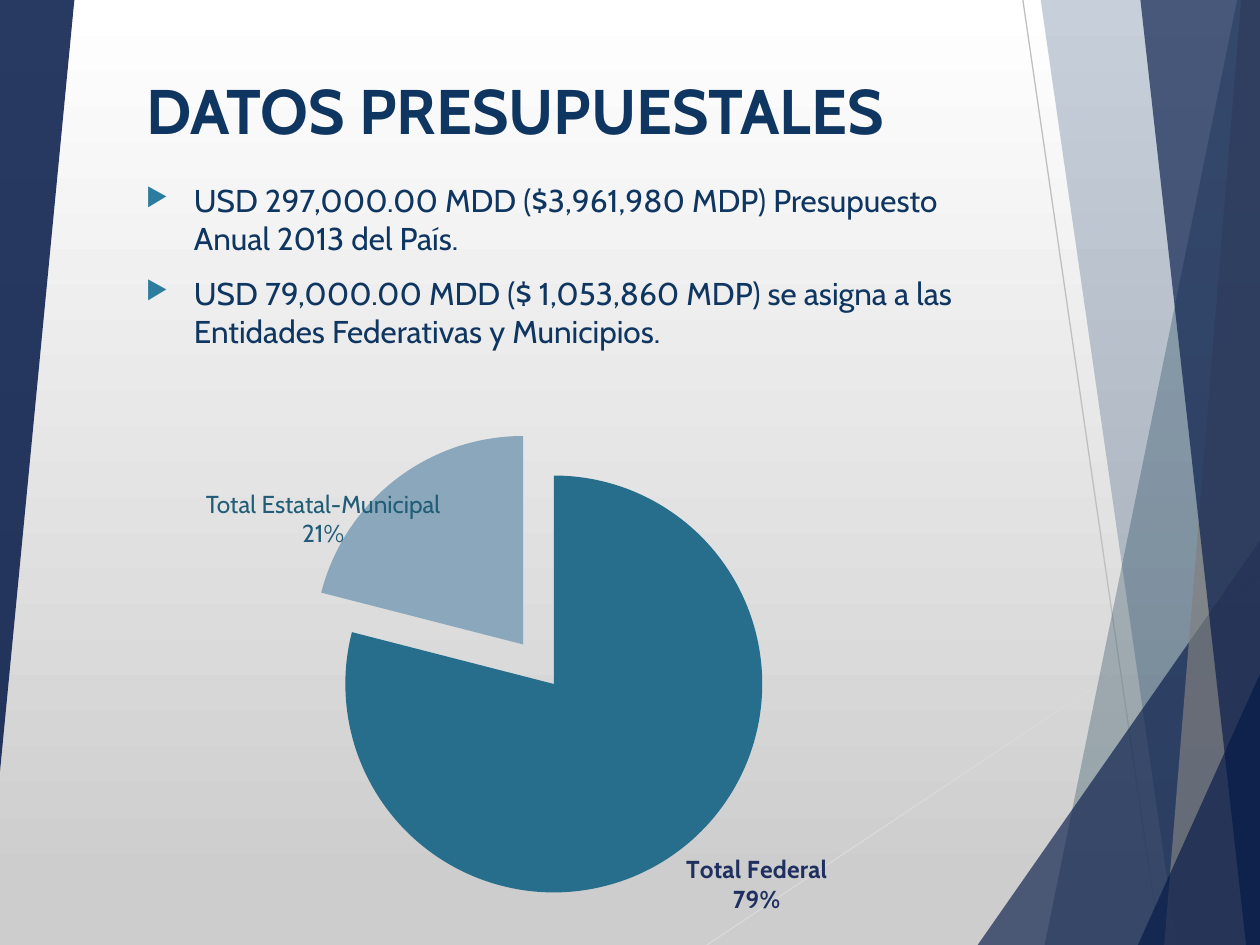
"""Build the budget data slide with its faceted frame, bullets and exploded pie."""
from lxml.etree import SubElement
from pptx import Presentation
from pptx.chart.data import CategoryChartData
from pptx.dml.color import RGBColor as Rgb
from pptx.enum.chart import XL_CHART_TYPE as ChartType, XL_LABEL_POSITION as LabelPosition
from pptx.enum.shapes import MSO_CONNECTOR as Connector
from pptx.enum.text import MSO_ANCHOR as Anchor, PP_ALIGN as Align
from pptx.oxml import parse_xml
from pptx.oxml.ns import nsdecls, qn
from pptx.util import Cm, Pt

THEME = {
    "font": "Cabin",
    "ink": Rgb.from_string("0F3661"),
    "bullet": "2C7C9F",
    "caption": Rgb.from_string("215D77"),
    "pie_label": Rgb.from_string("1F2F60"),
    "slices": ["276E8D", "8AA7BB"],
    "backdrop": [(0, "FFFFFF"), (0.94, "CDCDCD")],
    "title_size": Pt(36),
    "body_size": Pt(18),
    "label_size": Pt(14),
}
WIDTH, HEIGHT = 25.4, 19.05


def apply(target, values):
    for name, value in values.items():
        setattr(target, name, value)


def font_values(size, colour, bold=False):
    return {"name": THEME["font"], "size": THEME[size], "bold": bold}, {"rgb": THEME[colour]}


deck = Presentation()
apply(deck, {"slide_width": Cm(WIDTH), "slide_height": Cm(HEIGHT)})
page = deck.slides.add_slide(deck.slide_layouts[5])
backdrop = page.background.fill
backdrop.gradient()
backdrop.gradient_angle = 270
for stop, (position, colour) in zip(backdrop.gradient_stops, THEME["backdrop"]):
    stop.position = position
    stop.color.rgb = Rgb.from_string(colour)

for ends, colour in [
    ((14.25, HEIGHT, WIDTH, 11.61), "D9D9D9"),
    ((20.62, 0, 23.39, HEIGHT), "BFBFBF"),
]:
    line = page.shapes.add_connector(Connector.STRAIGHT, *map(Cm, ends))
    line.line.width = Pt(0.75)
    line.line.color.rgb = Rgb.from_string(colour)
    SubElement(line._element.spPr, qn("a:effectLst"))

RIGHT_SIDE = [(WIDTH, HEIGHT), (WIDTH, 0)]
facets = [
    ([(24.94, 0), (21.06, HEIGHT), *RIGHT_SIDE], "163E50", 30),
    ([(20.98, 0), (23.72, HEIGHT), *RIGHT_SIDE], "0F3661", 23),
    ([(19.71, HEIGHT), (WIDTH, 10.9), (WIDTH, HEIGHT)], "041847", 65),
    ([(25.02, 0), (23.47, HEIGHT), *RIGHT_SIDE], "808080", 70),
    ([(22.99, 0), (25.12, HEIGHT), *RIGHT_SIDE], "041847", 65),
    ([(22.94, HEIGHT), (WIDTH, 13.59), (WIDTH, HEIGHT)], "041847", 65),
    ([(0, 0), (1.5, 0), (0, 15.56)], "041847", 85),
]
for corners, colour, opacity in facets:
    points = [(Cm(x), Cm(y)) for x, y in corners]
    outline = page.shapes.build_freeform(*points[0])
    outline.add_line_segments(points[1:], close=True)
    facet = outline.convert_to_shape()
    facet.shadow.inherit = False
    facet.line.fill.background()
    facet.fill.solid()
    facet.fill.fore_color.rgb = Rgb.from_string(colour)
    tint = facet._element.spPr.find(f"{qn('a:solidFill')}/{qn('a:srgbClr')}")
    SubElement(tint, qn("a:alpha"), val=str(opacity * 1000))

title = page.shapes.title
apply(title, {"left": Cm(2.69), "top": Cm(1.32), "width": Cm(17.63), "height": Cm(3.66)})
title.text_frame.vertical_anchor = Anchor.TOP

bullets = page.shapes.add_textbox(Cm(2.69), Cm(3.53), Cm(16.99), Cm(5.79))

pie_data = CategoryChartData(number_format="0")
pie_data.categories = ["Total Federal", "Total Estatal-Municipal"]
pie_data.add_series("Series 1", [79, 21])
chart = page.shapes.add_chart(
    ChartType.PIE, Cm(3.51), Cm(8.53), Cm(15.01), Cm(10.52), pie_data
).chart
apply(chart, {"has_legend": False, "has_title": False})
apply(chart.font, {"name": THEME["font"], "size": THEME["label_size"]})
plot = chart.plots[0]
plot.vary_by_categories = True
series = plot.series[0]
for index, colour in enumerate(THEME["slices"]):
    fill = series.points[index].format.fill
    fill.solid()
    fill.fore_color.rgb = Rgb.from_string(colour)
small_slice = series._element.findall(qn("c:dPt"))[1]
small_slice.find(qn("c:idx")).addnext(parse_xml(f'<c:explosion {nsdecls("c")} val="24"/>'))

labels = series.data_labels
apply(labels, {
    "show_category_name": True, "show_percentage": True, "show_value": False,
    "number_format": "0%", "number_format_is_linked": False,
    "position": LabelPosition.OUTSIDE_END,
})
font, colour = font_values("label_size", "pie_label", True)
apply(labels.font, font)
apply(labels.font.color, colour)
labels._element.insert(0, parse_xml(
    f'<c:dLbl {nsdecls("c")}><c:idx val="1"/><c:delete val="1"/></c:dLbl>'))
labels._element.find(qn("c:showBubbleSize")).addnext(
    parse_xml(f'<c:separator {nsdecls("c")}>\n</c:separator>'))

plot_area = chart._chartSpace.chart.plotArea
for old_layout in plot_area.findall(qn("c:layout")):
    plot_area.remove(old_layout)
frame = {"layoutTarget": "inner", "xMode": "edge", "yMode": "edge",
         "x": 0.23, "y": 0.1, "w": 0.56, "h": 0.8}
settings = "".join(f'<c:{name} val="{value}"/>' for name, value in frame.items())
plot_area.insert(0, parse_xml(
    f'<c:layout {nsdecls("c")}><c:manualLayout>{settings}</c:manualLayout></c:layout>'))

caption = page.shapes.add_textbox(Cm(3.71), Cm(9.73), Cm(5.61), Cm(1.45))

texts = [
    (title, ["DATOS PRESUPUESTALES"], ("title_size", "ink", True), Align.LEFT, True),
    (bullets, [
        "USD 297,000.00 MDD ($3,961,980 MDP) Presupuesto Anual 2013 del País.",
        "USD 79,000.00 MDD ($ 1,053,860 MDP) se asigna a las Entidades Federativas y Municipios.",
    ], ("body_size", "ink"), Align.LEFT, True),
    (caption, ["Total Estatal-Municipal", "21%"], ("label_size", "caption"), Align.CENTER, False),
]
for box, lines, style, alignment, wraps in texts:
    box.text_frame.word_wrap = wraps
    box.text_frame.text = "\n".join(lines)
    font, colour = font_values(*style)
    for index, para in enumerate(box.text_frame.paragraphs):
        para.alignment = alignment
        if box is bullets:
            para.space_before = Pt(10 if index else 0)
            marks = para._p.get_or_add_pPr()
            apply_indent = {"marL": str(Cm(0.97)), "indent": str(-Cm(0.97))}
            for name, value in apply_indent.items():
                marks.set(name, value)
            SubElement(SubElement(marks, qn("a:buClr")), qn("a:srgbClr"), val=THEME["bullet"])
            SubElement(marks, qn("a:buSzPct"), val="80000")
            SubElement(marks, qn("a:buChar"), char="▶")
        for span in para.runs:
            apply(span.font, font)
            apply(span.font.color, colour)

deck.save("out.pptx")
